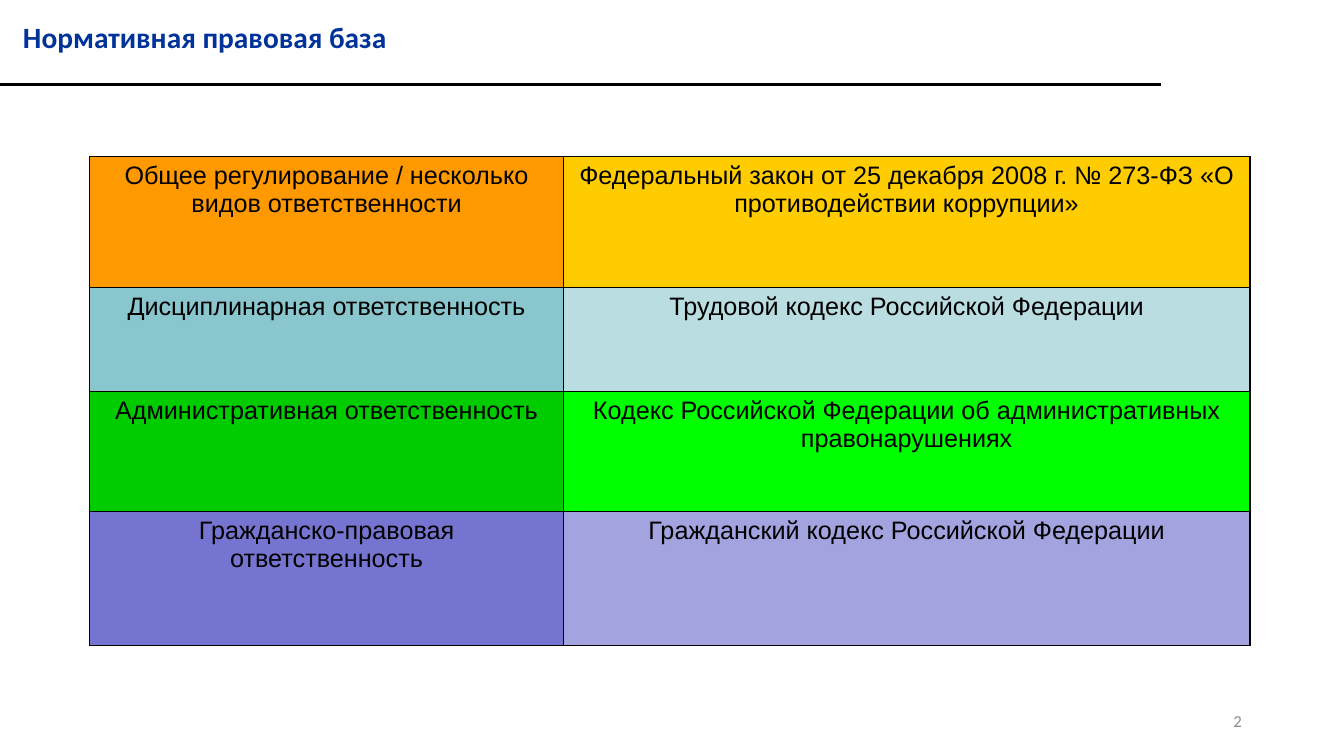
from lxml.etree import SubElement
from pptx import Presentation
from pptx.dml.color import RGBColor
from pptx.enum.shapes import MSO_CONNECTOR
from pptx.enum.text import MSO_ANCHOR, PP_ALIGN
from pptx.oxml.ns import qn
from pptx.util import Cm, Pt

BLACK = RGBColor(0x00, 0x00, 0x00)
NAVY = RGBColor(0x00, 0x33, 0x99)
GREY = RGBColor(0x8C, 0x8C, 0x8C)
ORANGE = RGBColor(0xFF, 0x99, 0x00)
AMBER = RGBColor(0xFF, 0xCC, 0x00)
TEAL = RGBColor(0x8A, 0xC6, 0xCD)
PALE_TEAL = RGBColor(0xBA, 0xDD, 0xE1)
GREEN = RGBColor(0x00, 0xCC, 0x00)
BRIGHT_GREEN = RGBColor(0x00, 0xFF, 0x00)
VIOLET = RGBColor(0x75, 0x75, 0xD1)
PALE_VIOLET = RGBColor(0xA3, 0xA3, 0xE0)

COLUMN_WIDTHS = (Cm(11.94), Cm(17.3))

# Row height, then (text, fill) for the kind of liability and its law
LAWS = [
    (Cm(3.3),
     ("Общее регулирование / несколько видов ответственности", ORANGE),
     ("Федеральный закон от 25 декабря 2008 г. № 273-ФЗ «О противодействии коррупции»", AMBER)),
    (Cm(2.62),
     ("Дисциплинарная ответственность", TEAL),
     ("Трудовой кодекс Российской Федерации", PALE_TEAL)),
    (Cm(3.02),
     ("Административная ответственность", GREEN),
     ("Кодекс Российской Федерации об административных правонарушениях", BRIGHT_GREEN)),
    (Cm(3.38),
     ("Гражданско-правовая ответственность", VIOLET),
     ("Гражданский кодекс Российской Федерации", PALE_VIOLET)),
]


def style(paragraph, font_name, size, color, align, bold=False):
    paragraph.alignment = align
    font = paragraph.font
    font.name, font.size, font.bold = font_name, Pt(size), bold
    font.color.rgb = color


def add_label(slide, text, left, top, width, height):
    """Add a one-paragraph text box and return its frame."""
    frame = slide.shapes.add_textbox(left, top, width, height).text_frame
    frame.word_wrap = True
    frame.text = text
    return frame


def add_heading(slide, left, top, width, height):
    """Place the title in the box, with a rule below it from the slide edge."""
    title = add_label(slide, "Нормативная правовая база", left, top, width, height)
    paragraph = title.paragraphs[0]
    paragraph.line_spacing = 0.8
    paragraph.space_before = Pt(6)
    style(paragraph, "Calibri", 21, NAVY, PP_ALIGN.LEFT, bold=True)

    rule_top = top + height + Cm(0.33)
    rule = slide.shapes.add_connector(
        MSO_CONNECTOR.STRAIGHT, 0, rule_top, Cm(29.26), rule_top)
    rule.line.color.rgb = BLACK
    rule.line.width = Pt(1.5)
    SubElement(rule._element.spPr, qn("a:effectLst"))


def add_borders(cell):
    properties = cell._tc.get_or_add_tcPr()
    for side in ("a:lnL", "a:lnR", "a:lnT", "a:lnB"):
        border = SubElement(properties, qn(side), w=str(Pt(1)))
        fill = SubElement(border, qn("a:solidFill"))
        SubElement(fill, qn("a:srgbClr"), val=str(BLACK))


def fill_cell(cell, text, color):
    add_borders(cell)
    cell.fill.solid()
    cell.fill.fore_color.rgb = color
    cell.margin_left = cell.margin_right = Cm(0.33)
    cell.margin_top = cell.margin_bottom = Cm(0.13)
    cell.text = text
    style(cell.text_frame.paragraphs[0], "Arial", 18, BLACK, PP_ALIGN.CENTER)


def add_law_table(slide, left, top):
    heights = [height for height, *_ in LAWS]
    laws = slide.shapes.add_table(
        len(LAWS), len(COLUMN_WIDTHS), left, top,
        sum(COLUMN_WIDTHS), sum(heights)).table
    laws.first_row = laws.horz_banding = False
    for column, width in zip(laws.columns, COLUMN_WIDTHS):
        column.width = width
    for row, (height, *entries) in zip(laws.rows, LAWS):
        row.height = height
        for cell, (text, color) in zip(row.cells, entries):
            fill_cell(cell, text, color)


def add_page_number(slide, left, top, width, height):
    number = add_label(slide, "2", left, top, width, height)
    number.vertical_anchor = MSO_ANCHOR.MIDDLE
    style(number.paragraphs[0], "Calibri", 12, GREY, PP_ALIGN.RIGHT)


def main():
    deck = Presentation()
    deck.slide_width, deck.slide_height = Cm(33.87), Cm(19.05)
    slide = deck.slides.add_slide(deck.slide_layouts[6])
    add_page_number(slide, Cm(23.93), Cm(17.65), Cm(7.62), Cm(1.02))
    add_heading(slide, Cm(0.33), Cm(0.53), Cm(17.93), Cm(1.27))
    add_law_table(slide, Cm(2.26), Cm(3.94))
    deck.save("out.pptx")


if __name__ == "__main__":
    main()
